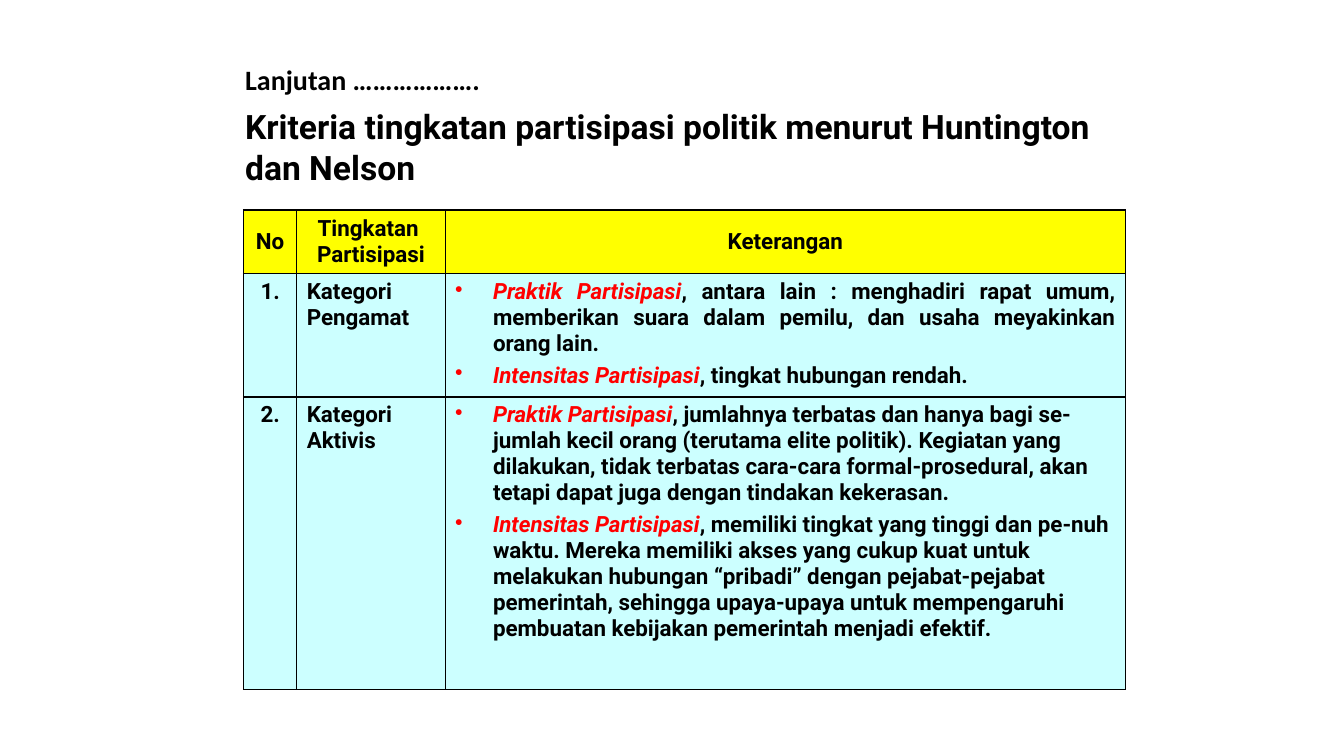
from lxml import etree
from pptx import Presentation
from pptx.dml.color import RGBColor
from pptx.enum import text
from pptx.oxml import ns
from pptx.util import Pt

BLACK = RGBColor(0, 0, 0)
RED = RGBColor(255, 0, 0)
YELLOW = RGBColor(255, 255, 0)
PALE_CYAN = RGBColor(204, 255, 255)

LEFT = text.PP_ALIGN.LEFT
CENTER = text.PP_ALIGN.CENTER
JUSTIFY = text.PP_ALIGN.JUSTIFY
TOP = text.MSO_ANCHOR.TOP
MIDDLE = text.MSO_ANCHOR.MIDDLE

HEADERS = ["No", "Tingkatan \nPartisipasi", "Keterangan"]
LEVELS = [
    ("1.", "Kategori\nPengamat", JUSTIFY, [
        ("Praktik Partisipasi",
         ", antara lain : menghadiri rapat umum, memberikan suara dalam "
         "pemilu, dan usaha meyakinkan orang lain. "),
        ("Intensitas Partisipasi", ", tingkat hubungan rendah. "),
    ]),
    ("2.", "Kategori\nAktivis", LEFT, [
        ("Praktik Partisipasi",
         ", jumlahnya terbatas dan hanya bagi se-jumlah kecil orang "
         "(terutama elite politik). Kegiatan yang dilakukan, tidak terbatas "
         "cara-cara formal-prosedural, akan tetapi dapat juga dengan "
         "tindakan kekerasan."),
        ("Intensitas Partisipasi",
         ", memiliki tingkat yang tinggi dan pe-nuh waktu. Mereka memiliki "
         "akses yang cukup kuat untuk melakukan hubungan “pribadi” dengan "
         "pejabat-pejabat pemerintah, sehingga upaya-upaya untuk "
         "mempengaruhi pembuatan kebijakan pemerintah menjadi efektif."),
    ]),
]
COLUMN_WIDTHS = [38, 106, 486]
ROW_HEIGHTS = [45.5, 88, 209]


def format_run(run, size, font="Roboto", color=BLACK, italic=False):
    run.font.name = font
    run.font.size = Pt(size)
    run.font.bold = True
    run.font.italic = italic
    run.font.color.rgb = color


def add_heading(slide, wording, left, top, width, height, size, font, anchor):
    heading = slide.shapes.add_textbox(Pt(left), Pt(top), Pt(width), Pt(height))
    frame = heading.text_frame
    frame.word_wrap = True
    frame.vertical_anchor = anchor
    frame.text = wording
    format_run(frame.paragraphs[0].runs[0], size, font)


def hang(paragraph):
    properties = paragraph._p.get_or_add_pPr()
    properties.set("marL", str(Pt(27)))
    properties.set("indent", str(-Pt(27)))
    return properties


def add_bullet(paragraph):
    properties = hang(paragraph)
    color = etree.SubElement(properties, ns.qn("a:buClr"))
    etree.SubElement(color, ns.qn("a:srgbClr"), val=str(RED))
    etree.SubElement(properties, ns.qn("a:buChar"), char="•")


def style_cell(cell, color, anchor):
    cell.fill.solid()
    cell.fill.fore_color.rgb = color
    cell.vertical_anchor = anchor
    properties = cell._tc.get_or_add_tcPr()
    for position, side in enumerate(["lnL", "lnR", "lnT", "lnB"]):
        border = etree.Element(ns.qn(f"a:{side}"), w=str(Pt(1)))
        fill = etree.SubElement(border, ns.qn("a:solidFill"))
        etree.SubElement(fill, ns.qn("a:srgbClr"), val=str(BLACK))
        properties.insert(position, border)


def fill_label(cell, wording, color, alignment, anchor=TOP):
    style_cell(cell, color, anchor)
    cell.text_frame.text = wording
    for paragraph in cell.text_frame.paragraphs:
        paragraph.alignment = alignment
        hang(paragraph)
        format_run(paragraph.runs[0], 16)


def fill_description(cell, criteria, alignment):
    style_cell(cell, PALE_CYAN, TOP)
    frame = cell.text_frame
    frame.text = "\n".join(term for term, _ in criteria)
    for paragraph, (_, explanation) in zip(frame.paragraphs, criteria):
        paragraph.alignment = alignment
        format_run(paragraph.runs[0], 16, color=RED, italic=True)
        explained = paragraph.add_run()
        explained.text = explanation
        format_run(explained, 16)
    frame.paragraphs[0].space_after = Pt(4)
    for paragraph in frame.paragraphs:
        add_bullet(paragraph)


def add_levels_table(slide):
    levels = slide.shapes.add_table(
        len(ROW_HEIGHTS), len(COLUMN_WIDTHS), Pt(174), Pt(150),
        Pt(sum(COLUMN_WIDTHS)), Pt(sum(ROW_HEIGHTS))).table
    levels.horz_banding = False
    for column, width in zip(levels.columns, COLUMN_WIDTHS):
        column.width = Pt(width)
    for row, height in zip(levels.rows, ROW_HEIGHTS):
        row.height = Pt(height)
    for column, header in enumerate(HEADERS):
        fill_label(levels.cell(0, column), header, YELLOW, CENTER, MIDDLE)
    for row, (number, category, alignment, criteria) in enumerate(LEVELS, 1):
        fill_label(levels.cell(row, 0), number, PALE_CYAN, CENTER)
        fill_label(levels.cell(row, 1), category, PALE_CYAN, LEFT)
        fill_description(levels.cell(row, 2), criteria, alignment)


def main():
    deck = Presentation()
    deck.slide_width = Pt(960)
    deck.slide_height = Pt(540)
    slide = deck.slides.add_slide(deck.slide_layouts[6])
    add_heading(slide, "Lanjutan ……………….", 168, 41, 246, 31, 20, "Calibri", TOP)
    add_heading(
        slide,
        "Kriteria tingkatan partisipasi politik menurut Huntington dan Nelson",
        168, 72, 654, 65.5, 24, "Roboto", MIDDLE)
    add_levels_table(slide)
    deck.save("out.pptx")


if __name__ == "__main__":
    main()
